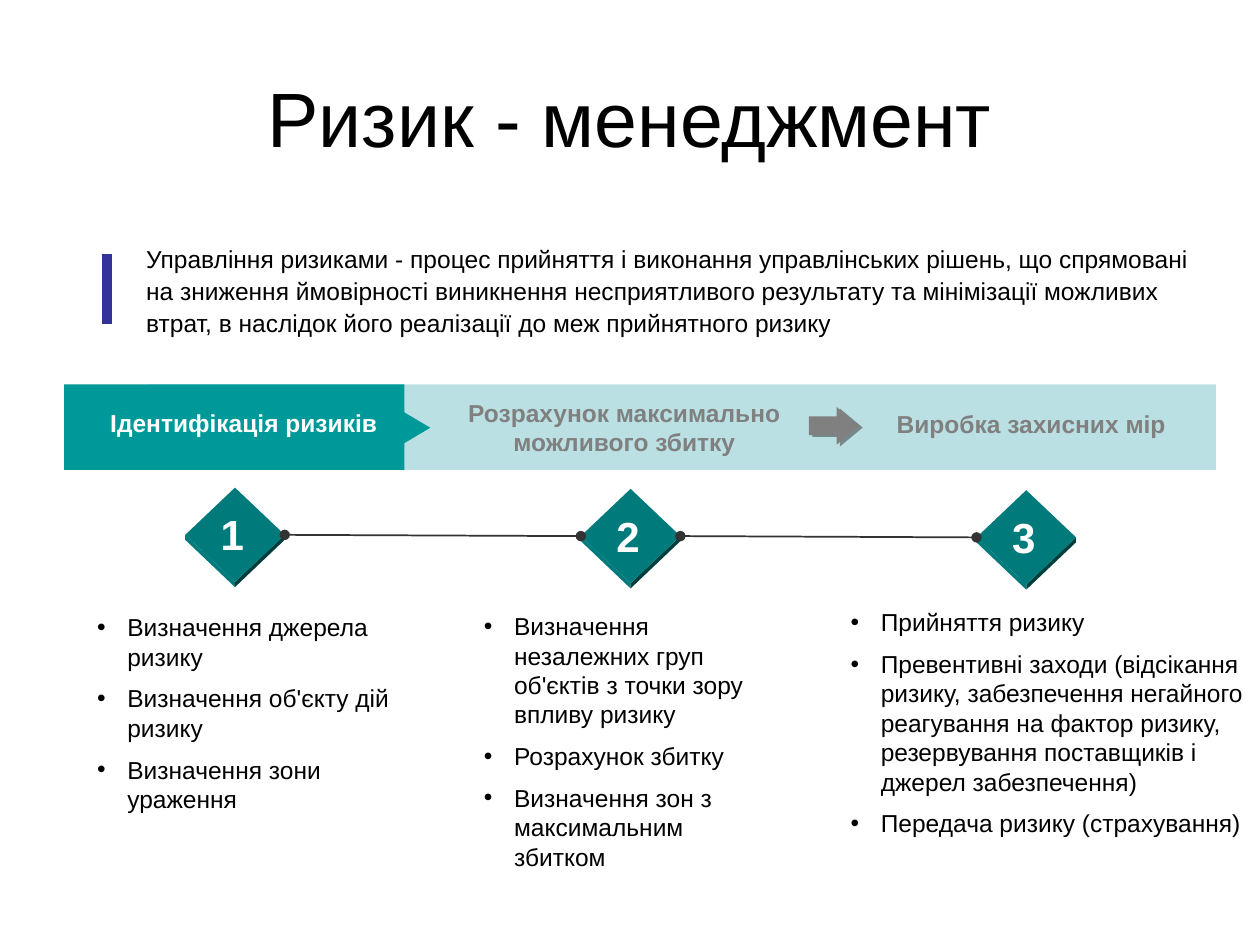
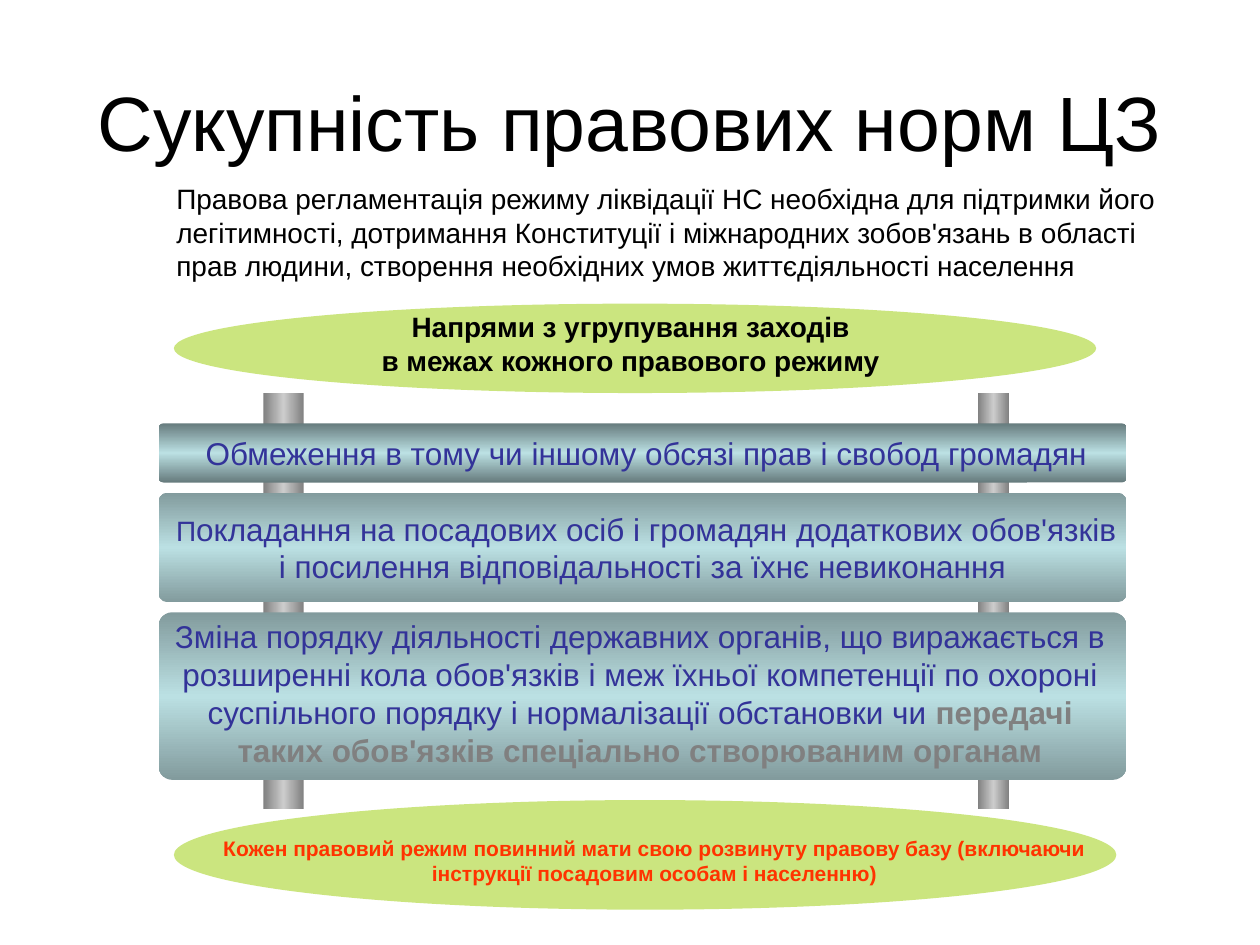
import copy

import pptx
import pptx.dml.color
import pptx.enum.shapes
import pptx.enum.text
import pptx.oxml.ns
import pptx.util
from lxml import etree

PX = 9144  # one hundredth of an inch, in EMU

FONT = "Arial"
BLACK, WHITE, GRAY, DARK = "000000", "FFFFFF", "808080", "333333"
TEAL, PALE, DIAMOND = "009999", "BBE0E3", "007A7A"
INDIGO, GREEN, RED = "333399", "99CC00", "FF3300"

MSO = pptx.enum.shapes.MSO_SHAPE
ALIGN = pptx.enum.text.PP_ALIGN
ANCHOR = pptx.enum.text.MSO_ANCHOR
qn = pptx.oxml.ns.qn


def rgb(value):
    return pptx.dml.color.RGBColor.from_string(value)


def emu(*lengths):
    return [pptx.util.Emu(round(n * PX)) for n in lengths]


def outer_shadow(parent, color, dist, angle, alpha=100):
    effects = etree.SubElement(parent, qn("a:effectLst"))
    shadow = etree.SubElement(effects, qn("a:outerShdw"), dist=str(dist), dir=str(angle * 60000))
    clr = etree.SubElement(shadow, qn("a:srgbClr"), val=color)
    etree.SubElement(clr, qn("a:alpha"), val=str(alpha * 1000))
    return effects


class Deck:
    """Holds the presentation, its text style and the slide being filled."""

    def __init__(self):
        self.prs = pptx.Presentation()
        self.prs.slide_width, self.prs.slide_height = emu(1000, 750)

    def new_slide(self, layout, title, box):
        self.s = self.prs.slides.add_slide(self.prs.slide_layouts[layout])
        self.placeholder(0, box, [title], size=44, align=ALIGN.CENTER, anchor=ANCHOR.MIDDLE)

    def placeholder(self, idx, box, paragraphs, **style):
        sp = self.s.placeholders[idx]
        sp.left, sp.top, sp.width, sp.height = emu(*box)
        self.set_text(sp, paragraphs, **style)

    def text(self, box, paragraphs, **style):
        sp = self.s.shapes.add_textbox(*emu(*box))
        self.set_text(sp, paragraphs, **{"align": ALIGN.CENTER, **style})

    def set_text(self, sp, paragraphs, size=14, color=BLACK, bold=False, align=ALIGN.LEFT,
                 anchor=ANCHOR.TOP, wrap=True, bullets=False, line_spacing=1.0, shadow=None):
        """Each paragraph is a string or a list of (text, size, color, bold) spans."""
        tf = sp.text_frame
        tf.word_wrap = wrap
        tf.auto_size = pptx.enum.text.MSO_AUTO_SIZE.NONE
        tf.vertical_anchor = anchor
        for i, spans in enumerate(paragraphs):
            p = tf.paragraphs[0] if i == 0 else tf.add_paragraph()
            p.alignment = align
            p.line_spacing = line_spacing
            p.space_before = pptx.util.Pt(size / 2 if bullets and i else 0)
            self.bullet(p, bullets)
            if isinstance(spans, str):
                spans = [(spans, size, color, bold)]
            for text, *look in spans:
                r = p.add_run()
                r.text = text
                self.format_run(r, *look, shadow)

    def bullet(self, p, shown):
        pPr = p._p.get_or_add_pPr()
        indent = 24 * PX if shown else 0
        pPr.set("marL", str(indent))
        pPr.set("indent", str(-indent))
        if shown:
            etree.SubElement(pPr, qn("a:buChar"), char="•")
        else:
            etree.SubElement(pPr, qn("a:buNone"))

    def format_run(self, r, size, color, bold, shadow):
        r.font.size = pptx.util.Pt(size)
        r.font.bold = bold
        r.font.color.rgb = rgb(color)
        if shadow:
            rPr = r._r.get_or_add_rPr()
            rPr.find(qn("a:solidFill")).addnext(outer_shadow(rPr, shadow, 25400, 45))
        r.font.name = FONT

    def shape(self, kind, box, color, alpha=None, adj=()):
        sp = self.s.shapes.add_shape(kind, *emu(*box))
        for i, value in enumerate(adj):
            sp.adjustments[i] = value
        self.paint(sp, color)
        if alpha:
            clr = sp._element.spPr.find(qn("a:solidFill"))[0]
            etree.SubElement(clr, qn("a:alpha"), val=str(alpha * 1000))
        return sp

    def paint(self, sp, color):
        sp.shadow.inherit = False
        sp.line.fill.background()
        sp.fill.solid()
        sp.fill.fore_color.rgb = rgb(color)

    def gradient(self, sp, edge, middle, angle):
        """Fill from edge to middle and back to edge."""
        sp.fill.gradient()
        sp.fill.gradient_angle = angle
        for stop, color in zip(sp.fill.gradient_stops, (edge, middle)):
            stop.color.rgb = rgb(color)
        stops = sp._element.spPr.find(".//" + qn("a:gsLst"))
        stops.append(copy.deepcopy(stops[0]))
        for gs, pos in zip(stops, (0, 50000, 100000)):
            gs.set("pos", str(pos))

    def polygon(self, points, color):
        start, *rest = [tuple(emu(x, y)) for x, y in points]
        builder = self.s.shapes.build_freeform(*start)
        builder.add_line_segments(rest, close=True)
        self.paint(builder.convert_to_shape(), color)

    def line(self, start, end, color, width, dots=False):
        c = self.s.shapes.add_connector(pptx.enum.shapes.MSO_CONNECTOR.STRAIGHT,
                                        *emu(*start, *end))
        c.line.color.rgb = rgb(color)
        c.line.width = pptx.util.Pt(width)
        spPr = c._element.spPr
        if dots:
            for tag in ("a:headEnd", "a:tailEnd"):
                etree.SubElement(spPr.find(qn("a:ln")), qn(tag), type="oval")
        etree.SubElement(spPr, qn("a:effectLst"))
        return c

    def step(self, number, x, y):
        """Numbered diamond with a thin edge below it."""
        w, h, depth = 79, 75, 4
        mid_x, mid_y = x + w / 2, y + h / 2
        for side, color in ((x, DIAMOND), (x + w, "003D3D")):
            self.polygon([(side, mid_y), (side, mid_y + depth),
                          (mid_x, y + h + depth), (mid_x, y + h)], color)
        sp = self.shape(MSO.DIAMOND, (x, y, w, h), DIAMOND)
        self.text((x - 1, y + 12, 77, 50), [str(number)], size=24, color=WHITE, bold=True)
        return sp


def risk_management(deck):
    deck.new_slide(4, "Ризик - менеджмент", (50, 30, 900, 125))
    deck.placeholder(1, (106, 186, 851, 87), [
        "Управління ризиками - процес прийняття і виконання управлінських рішень, "
        "що спрямовані на зниження ймовірності виникнення несприятливого результату "
        "та мінімізації можливих втрат, в наслідок його реалізації до меж "
        "прийнятного ризику"], line_spacing=1.1)
    deck.line((85, 202), (85, 257), INDIGO, 6)

    deck.shape(MSO.RECTANGLE, (118, 305, 847, 68), PALE)
    deck.shape(MSO.RECTANGLE, (51, 305, 270, 68), TEAL)
    deck.shape(MSO.ISOSCELES_TRIANGLE, (312, 326, 32, 27), TEAL).rotation = 90
    arrow = deck.shape(MSO.RIGHT_ARROW, (642, 323, 40, 30), GRAY, adj=(0.5, 0.6))
    spPr = arrow._element.spPr
    spPr.remove(spPr.find(qn("a:effectLst")))
    outer_shadow(spPr, DARK, 27940, 27, 50)
    deck.text((67, 319, 253, 33), ["Ідентифікація ризиків"],
              color=WHITE, bold=True, shadow=BLACK)
    deck.text((326, 311, 339, 57), ["Розрахунок максимально можливого збитку"],
              color=GRAY, bold=True)
    deck.text((697, 320, 243, 33), ["Виробка захисних мір"], color=GRAY, bold=True)

    steps = [deck.step(i + 1, 147 + 314 * i, 387 + i) for i in range(3)]
    for left, right in zip(steps, steps[1:]):
        link = deck.line((0, 0), (1, 1), DARK, 1, dots=True)
        link.begin_connect(left, 3)
        link.end_connect(right, 1)

    columns = [
        ((67, 481, 260, 208), [
            "Визначення джерела ризику",
            "Визначення об'єкту дій ризику",
            "Визначення зони ураження"]),
        ((374, 480, 244, 196), [
            "Визначення незалежних груп об'єктів з точки зору впливу ризику",
            "Розрахунок збитку",
            "Визначення зон з максимальним збитком"]),
        ((665, 477, 335, 196), [
            "Прийняття ризику",
            "Превентивні заходи (відсікання ризику, забезпечення негайного реагування "
            "на фактор ризику, резервування поставщиків і джерел забезпечення)",
            "Передача ризику (страхування)"]),
    ]
    for idx, (box, items) in enumerate(columns, start=2):
        deck.placeholder(idx, box, items, bullets=True)


def legal_norms(deck):
    deck.new_slide(1, "Сукупність правових норм ЦЗ", (50, 21, 900, 150))
    deck.placeholder(1, (130, 139, 819, 90), [
        "Правова регламентація режиму ліквідації НС необхідна для підтримки його "
        "легітимності, дотримання Конституції і міжнародних зобов'язань в області "
        "прав людини, створення необхідних умов життєдіяльності населення"], size=16)

    for box in ((138, 241, 732, 71), (138, 635, 748, 87)):
        deck.shape(MSO.OVAL, box, GREEN, alpha=50)
    for x, width in ((776, 25), (209, 32)):
        pillar = deck.shape(MSO.RECTANGLE, (x, 312, width, 330), GRAY)
        deck.gradient(pillar, GRAY, "CCCCCC", 0)

    bars = [
        (47, "667B7D", [[(" ", 16, INDIGO, False),
                         ("Обмеження в тому чи іншому обсязі прав і свобод громадян",
                          18, INDIGO, False)]]),
        (87, "829B9D", [[(" П", 16, INDIGO, False),
                         ("окладання на посадових осіб і громадян додаткових обов'язків",
                          18, INDIGO, False)],
                        "і посилення відповідальності за їхнє невиконання"]),
        (133, "829B9D", []),
    ]
    top = 336
    for height, edge, paragraphs in bars:
        bar = deck.shape(MSO.ROUNDED_RECTANGLE, (126, top, 768, height), PALE, adj=(0.08,))
        deck.gradient(bar, edge, PALE, 90)
        deck.set_text(bar, paragraphs, size=18, color=INDIGO, align=ALIGN.CENTER,
                      anchor=ANCHOR.MIDDLE, wrap=False)
        top += height + 8

    deck.text((280, 241, 441, 64), ["Напрями з угрупування заходів",
                                    "в межах кожного правового режиму"],
              size=16, bold=True, shadow=BLACK)
    deck.text((122, 485, 772, 130), [[
        ("Зміна порядку діяльності державних органів, що виражається в розширенні "
         "кола обов'язків і меж їхньої компетенції по охороні суспільного порядку "
         "і нормалізації обстановки чи ", 18, INDIGO, False),
        ("передачі таких обов'язків спеціально створюваним органам", 18, GRAY, True)]])
    deck.text((165, 658, 709, 50), [
        "Кожен правовий режим повинний мати свою розвинуту правову базу "
        "(включаючи інструкції посадовим особам і населенню)"],
        size=12, color=RED, bold=True)


def main():
    deck = Deck()
    risk_management(deck)
    legal_norms(deck)
    deck.prs.save("out.pptx")


if __name__ == "__main__":
    main()
